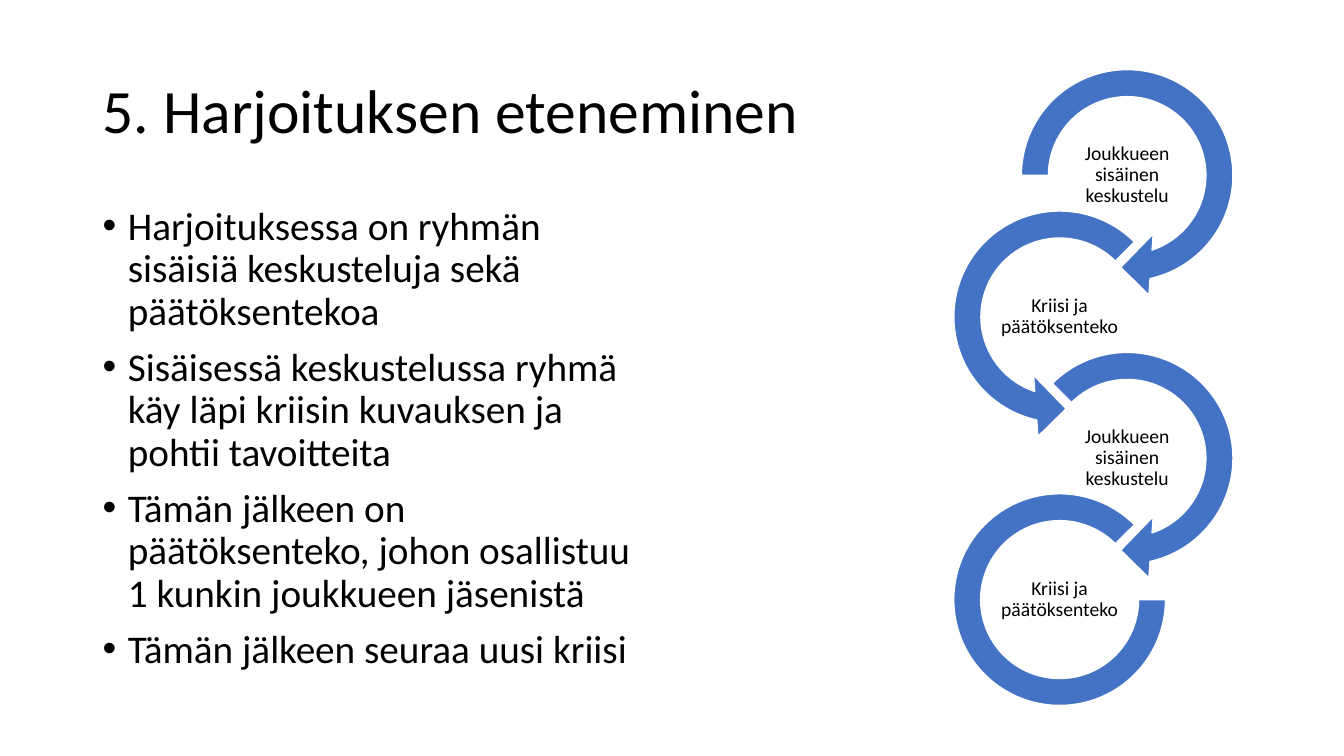
from lxml import etree
from pptx import Presentation
from pptx.dml.color import RGBColor
from pptx.enum import shapes, text
from pptx.oxml import ns
from pptx.util import Inches, Pt

BLUE = RGBColor(0x44, 0x72, 0xC4)
WHITE = RGBColor(0xFF, 0xFF, 0xFF)
BLACK = RGBColor(0, 0, 0)
KIND = shapes.MSO_SHAPE
MIDDLE = text.MSO_ANCHOR.MIDDLE
TITLE = "5. Harjoituksen eteneminen"
POINTS = [
    "Harjoituksessa on ryhmän sisäisiä keskusteluja sekä päätöksentekoa",
    "Sisäisessä keskustelussa ryhmä käy läpi kriisin kuvauksen ja pohtii tavoitteita",
    "Tämän jälkeen on päätöksenteko, johon osallistuu 1 kunkin joukkueen jäsenistä",
    "Tämän jälkeen seuraa uusi kriisi",
]
TALK = "Joukkueen sisäinen keskustelu"
CRISIS = "Kriisi ja päätöksenteko"
STEPS = [
    (TALK, KIND.CIRCULAR_ARROW, 2.44, (0.11, 11.42, 45, 108, 0.125)),
    (CRISIS, KIND.LEFT_CIRCULAR_ARROW, 2.44, (0.11, 11.42, 63, 189, 0.125)),
    (TALK, KIND.CIRCULAR_ARROW, 2.44, (0.11, 11.42, 45, 135, 0.125)),
    (CRISIS, KIND.BLOCK_ARC, 2.1, (0, 189, 0.127)),
]
MID_X = (11.18, 10.51)
TOP_Y = 1.74
STEP_Y = 1.403


def style(item, values):
    for name, value in values.items():
        setattr(item, name, value)


def add_text(parent, box, lines, size, frame=None, para=None):
    shape = parent.add_textbox(*map(Inches, box))
    body = shape.text_frame
    style(body, {"word_wrap": True, **(frame or {})})
    body.text = "\n".join(lines)
    for line in body.paragraphs:
        style(line, {"line_spacing": 0.9, **(para or {})})
        for run in line.runs:
            style(run.font, {"name": "Calibri", "size": Pt(size)})
            run.font.color.rgb = BLACK
    return body


def add_bullet(line):
    props = line._p.get_or_add_pPr()
    props.set("marL", str(Inches(0.25)))
    props.set("indent", str(Inches(-0.25)))
    font = etree.SubElement(props, ns.qn("a:buFont"))
    font.set("typeface", "Arial")
    mark = etree.SubElement(props, ns.qn("a:buChar"))
    mark.set("char", "•")


def add_ring(parent, kind, x, y, size, adjust):
    box = (x - size / 2, y - size / 2, size, size)
    ring = parent.add_shape(kind, *map(Inches, box))
    ring.shadow.inherit = False
    ring.fill.solid()
    ring.fill.fore_color.rgb = BLUE
    ring.line.color.rgb = WHITE
    ring.line.width = Pt(1)
    for i, value in enumerate(adjust):
        ring.adjustments[i] = value


def add_cycle(parent):
    edge = Inches(0.01)
    sides = ("left", "top", "right", "bottom")
    frame = {f"margin_{side}": edge for side in sides}
    frame["vertical_anchor"] = MIDDLE
    para = {"alignment": text.PP_ALIGN.CENTER}
    for i, (label, kind, size, adjust) in enumerate(STEPS):
        x, y = MID_X[i % 2], TOP_Y + i * STEP_Y
        add_ring(parent, kind, x, y, size, adjust)
        box = (x - 0.68, y - 0.34, 1.36, 0.68)
        add_text(parent, box, [label], 14, frame, para)


def main():
    deck = Presentation()
    style(deck, {"slide_width": Inches(13.33), "slide_height": Inches(7.5)})
    slide = deck.slides.add_slide(deck.slide_layouts[6])
    add_text(slide.shapes, (0.92, 0.4, 11.5, 1.45), [TITLE], 44,
             {"vertical_anchor": MIDDLE})
    body = add_text(slide.shapes, (0.92, 2, 5.67, 4.76), POINTS, 28,
                    para={"space_before": Pt(10)})
    for line in body.paragraphs:
        add_bullet(line)
    add_cycle(slide.shapes.add_group_shape().shapes)
    deck.save("out.pptx")


if __name__ == "__main__":
    main()
